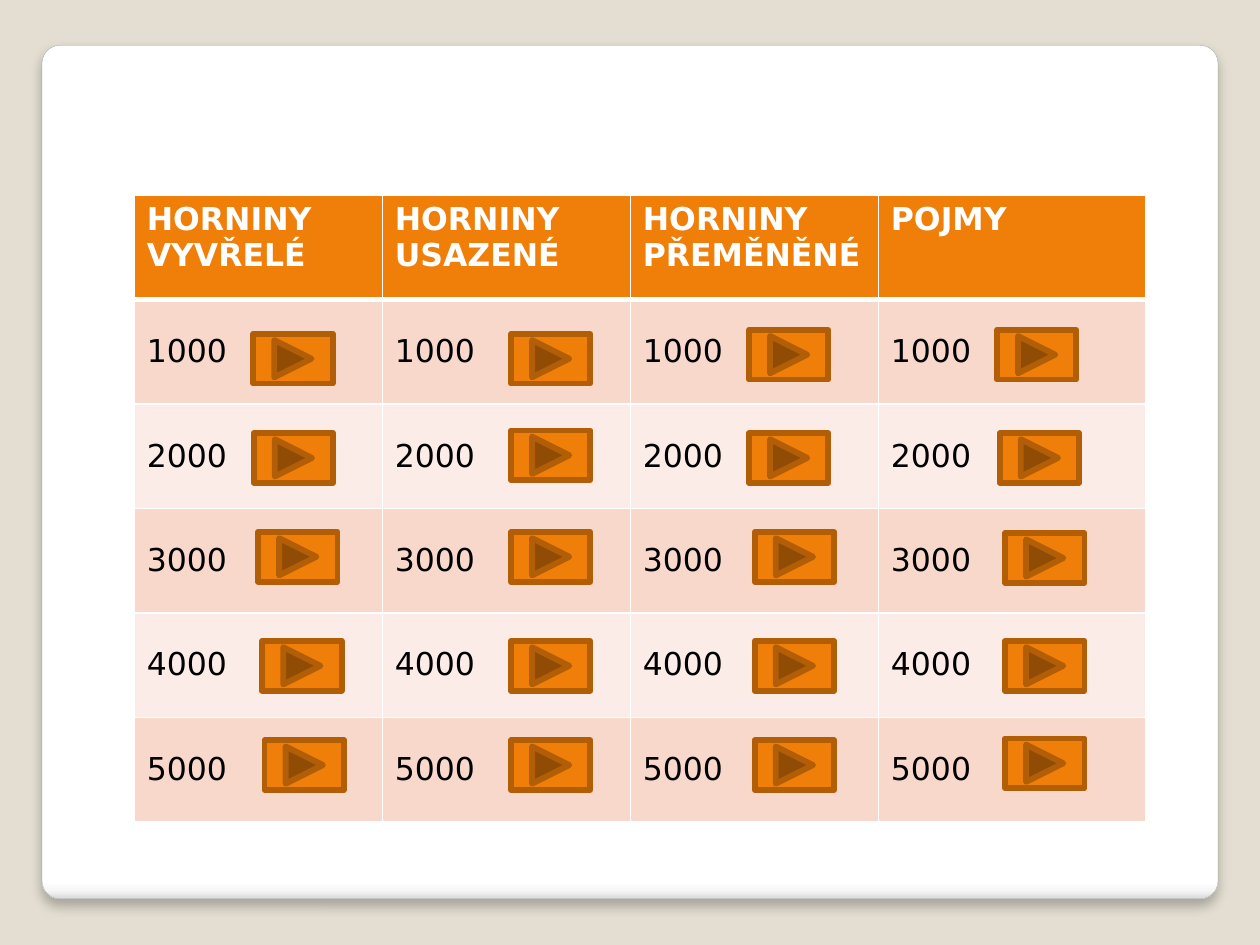
from lxml import etree
from pptx import Presentation
from pptx.dml.color import RGBColor
from pptx.enum import shapes, text
from pptx.oxml import parse_xml
from pptx.oxml.ns import nsdecls
from pptx.util import Pt

# Content
HEADERS = ["HORNINY\nVYVŘELÉ", "HORNINY\nUSAZENÉ", "HORNINY\nPŘEMĚNĚNÉ", "POJMY"]
POINTS = ["1000", "2000", "3000", "4000", "5000"]

# Left and top of the button for each score, one list per category
BUTTONS = [
    [(144.7, 190.8), (145, 247.5), (147.5, 304), (149.8, 366.3), (151.2, 423)],
    [(292, 190.8), (292, 246), (292, 304), (292, 366.3), (292, 423)],
    [(428, 188.5), (428, 247.5), (431.3, 304), (431.3, 366.3), (431.3, 423)],
    [(569.7, 188.5), (571.3, 247.5), (574.3, 304.7), (574.3, 366.3), (574.3, 422)],
]
BUTTON_SIZE = (45.4, 28.4)

COLORS = {
    "background": "E3DED1", "panel_line": "A4A4A4", "white": "FFFFFF", "black": "000000",
    "orange": "F07F09", "dark_orange": "B25E07", "odd": "F9D8CC", "even": "FCECE7",
}
PANEL_STOPS = [(0, "FFFFFF"), (98, "FFFFFF"), (99, "F7F7F7"), (100, "DADADA")]
FONT = "DejaVu Sans"
TABLE_LEFT, TABLE_TOP = 76.7, 111.4
COLUMN_WIDTHS = [141.75, 141.75, 141.75, 153]
ROW_HEIGHT = 59.7


def rgb(name):
    return RGBColor.from_string(COLORS[name])


def add_panel(page):
    panel = page.shapes.add_shape(shapes.MSO_SHAPE.ROUNDED_RECTANGLE,
                                  Pt(24), Pt(25.9), Pt(672), Pt(487.7))
    panel.adjustments[0] = 0.021
    panel.line.color.rgb = rgb("panel_line")
    panel.line.width = Pt(0.16)
    # Four-stop gradient and soft shadow
    stops = "".join(f'<a:gs pos="{pos * 1000}"><a:srgbClr val="{color}"/></a:gs>'
                    for pos, color in PANEL_STOPS)
    outline = panel.line._get_or_add_ln()
    outline.addprevious(parse_xml(
        f'<a:gradFill {nsdecls("a")} rotWithShape="1"><a:gsLst>{stops}</a:gsLst>'
        '<a:lin ang="5400000" scaled="0"/></a:gradFill>'))
    outline.addnext(parse_xml(
        f'<a:effectLst {nsdecls("a")}><a:outerShdw blurRad="{Pt(6)}" dist="{Pt(4)}" '
        'dir="5400000" algn="tl" rotWithShape="0"><a:srgbClr val="000000">'
        '<a:alpha val="25000"/></a:srgbClr></a:outerShdw></a:effectLst>'))


def set_borders(cell, bottom, top):
    properties = cell._tc.get_or_add_tcPr()
    for side, width in (("L", 1), ("R", 1), ("T", top), ("B", bottom)):
        properties.append(parse_xml(
            f'<a:ln{side} {nsdecls("a")} w="{Pt(width)}"><a:solidFill>'
            f'<a:srgbClr val="{COLORS["white"]}"/></a:solidFill></a:ln{side}>'))


def fill_cell(cell, words, row):
    header = row == 0
    set_borders(cell, bottom=3 if header else 1, top=3 if row == 1 else 1)
    cell.fill.solid()
    cell.fill.fore_color.rgb = rgb("orange" if header else "odd" if row % 2 else "even")
    cell.vertical_anchor = text.MSO_ANCHOR.TOP if header else text.MSO_ANCHOR.MIDDLE
    cell.text = words
    for para in cell.text_frame.paragraphs:
        para.font.name = FONT
        para.font.size = Pt(18)
        para.font.bold = header
        para.font.color.rgb = rgb("white" if header else "black")


def add_score_table(page):
    rows = [HEADERS] + [[score] * len(HEADERS) for score in POINTS]
    table = page.shapes.add_table(len(rows), len(HEADERS), Pt(TABLE_LEFT), Pt(TABLE_TOP),
                                  Pt(sum(COLUMN_WIDTHS)), Pt(ROW_HEIGHT * len(rows))).table
    for column, width in zip(table.columns, COLUMN_WIDTHS):
        column.width = Pt(width)
    for index, row in enumerate(rows):
        table.rows[index].height = Pt(ROW_HEIGHT)
        for column, words in enumerate(row):
            fill_cell(table.cell(index, column), words, index)


def add_button(page, left, top):
    button = page.shapes.add_shape(shapes.MSO_SHAPE.ACTION_BUTTON_FORWARD_OR_NEXT,
                                   Pt(left), Pt(top), *map(Pt, BUTTON_SIZE))
    button.shadow.inherit = False
    button.fill.solid()
    button.fill.fore_color.rgb = rgb("orange")
    button.line.color.rgb = rgb("dark_orange")
    button.line.width = Pt(3.35)
    etree.SubElement(button.line._get_or_add_ln(),
                     "{http://schemas.openxmlformats.org/drawingml/2006/main}round")


def main():
    deck = Presentation()
    deck.slide_width, deck.slide_height = Pt(720), Pt(540)
    page = deck.slides.add_slide(deck.slide_layouts[6])
    page.background.fill.solid()
    page.background.fill.fore_color.rgb = rgb("background")

    add_panel(page)
    add_score_table(page)
    for column in BUTTONS:
        for left, top in column:
            add_button(page, left, top)
    deck.save("out.pptx")


if __name__ == "__main__":
    main()
